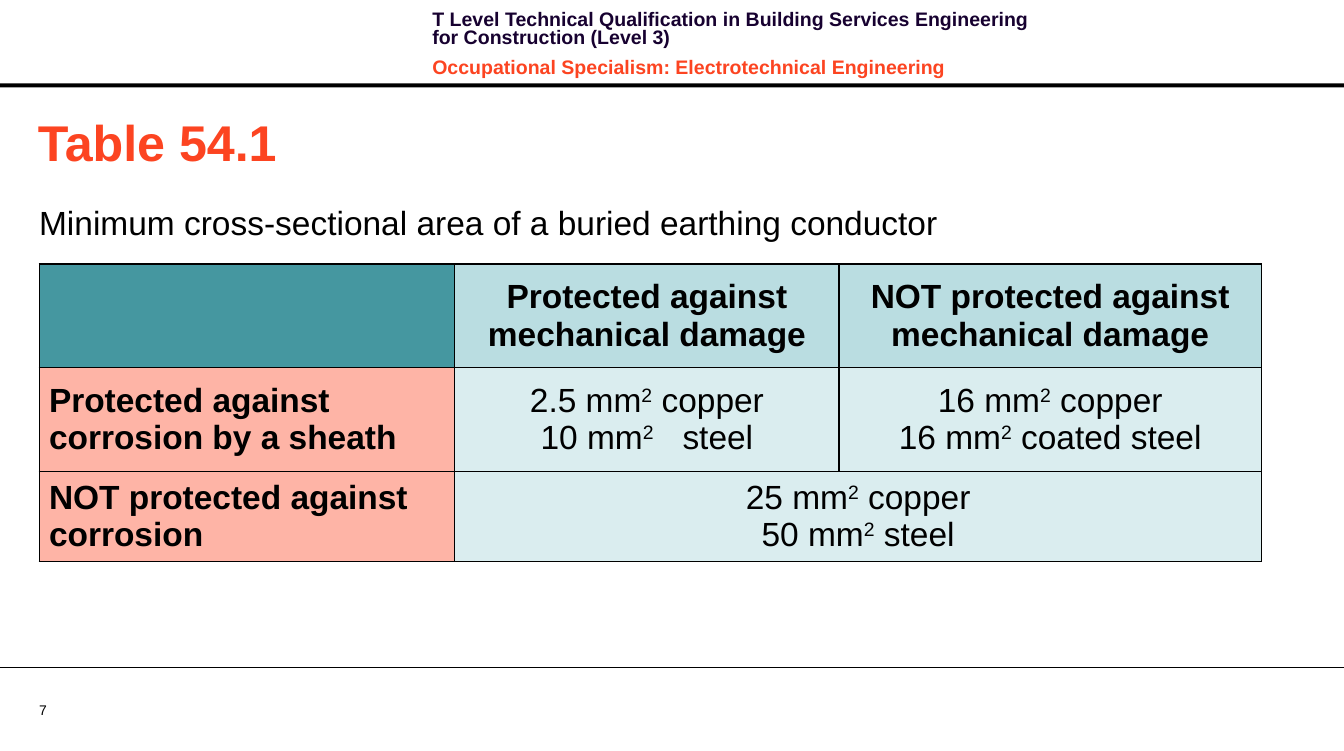
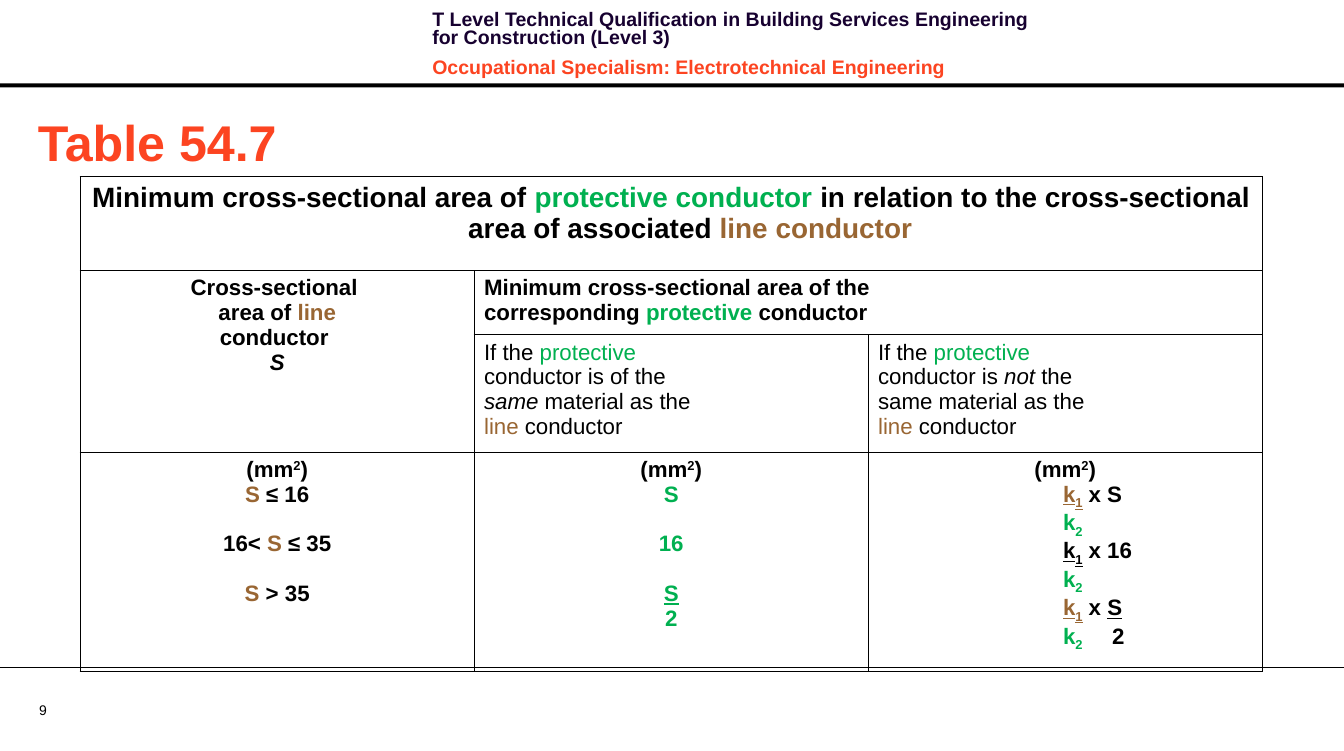
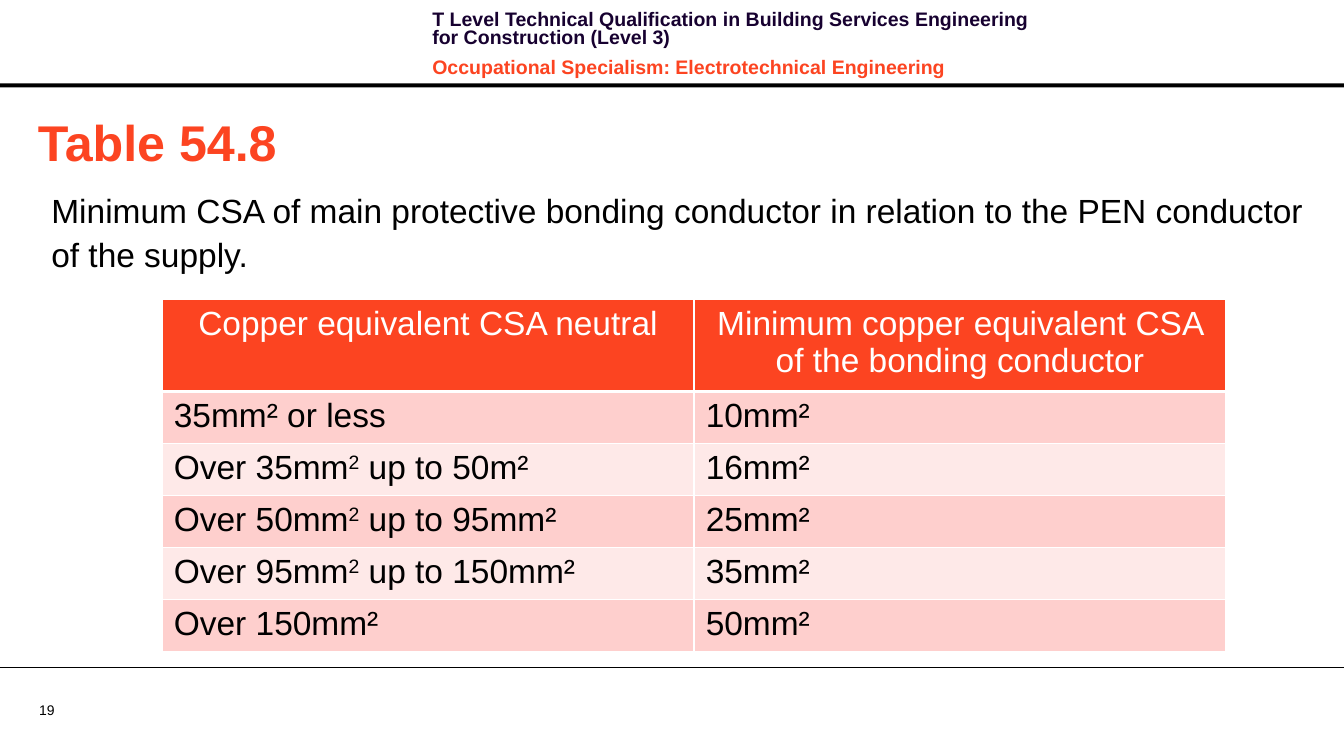
from dataclasses import dataclass

from pptx import Presentation
from pptx.dml.color import RGBColor
from pptx.enum.shapes import MSO_CONNECTOR, MSO_SHAPE
from pptx.enum.text import MSO_ANCHOR, PP_ALIGN
from pptx.oxml import parse_xml
from pptx.oxml.ns import nsdecls
from pptx.util import Cm, Pt

LEFT, CENTER = PP_ALIGN.LEFT, PP_ALIGN.CENTER
TOP, MIDDLE = MSO_ANCHOR.TOP, MSO_ANCHOR.MIDDLE
STRAIGHT, RECT = MSO_CONNECTOR.STRAIGHT, MSO_SHAPE.RECTANGLE


@dataclass(frozen=True)
class Theme:
    font: str = "Arial"
    black: str = "000000"
    white: str = "FFFFFF"
    navy: str = "170130"
    red: str = "FC4421"
    green: str = "00B050"
    brown: str = "996633"
    teal: str = "4597A0"
    sky: str = "BADDE1"
    mist: str = "DAEDEF"
    salmon: str = "FEB4A6"
    pink: str = "FECFCD"
    blush: str = "FEE9E8"
    title: int = 36
    body: int = 24
    lead: int = 20
    small: int = 16
    head: int = 14
    page: int = 10


T = Theme()
WIDE, HIGH = 34.01, 19
SKIP = Pt(17.9)  # one line of small text
HANG = Cm(0.96)
STYLE = {
    "navy": {"color": T.navy},
    "red": {"color": T.red},
    "green": {"color": T.green},
    "brown": {"color": T.brown},
    "slant": {"italic": True},
    "under": {"underline": True},
    "up": {"baseline": "30000"},
    "down": {"baseline": "-25000"},
    "wide": {"spc": "1400"},
}


def para(*runs, **form):
    """A paragraph: runs are strings or (string, style names) pairs."""
    return runs, form


def area(before, after):
    return para(before, ("2", "up"), after)


def cell(*paras, **look):
    return paras, look


def put(obj, values):
    for key, value in values.items():
        setattr(obj, key, value)


def paint(fill, color):
    if color:
        fill.solid()
        fill.fore_color.rgb = RGBColor.from_string(color)
    else:
        fill.background()


def set_form(par, form):
    """Set indents and tab stops, then the plain paragraph attributes."""
    form = dict(form)
    hang, tabs = form.pop("hang", 0), form.pop("tabs", ())
    props = par._p.get_or_add_pPr()
    if hang:
        props.set("marL", str(hang))
        props.set("indent", str(-hang))
    if tabs:
        stops = "".join(f'<a:tab pos="{Cm(x)}" algn="l"/>' for x in tabs)
        props.append(parse_xml(f'<a:tabLst {nsdecls("a")}>{stops}</a:tabLst>'))
    put(par, form)


def add_run(par, text, look):
    look = {"name": T.font, **look}
    run = par.add_run()
    run.text = text
    for key in ("baseline", "spc"):
        if key in look:
            run._r.get_or_add_rPr().set(key, look.pop(key))
    paint(run.font.fill, look.pop("color"))
    look["size"] = Pt(look["size"])
    put(run.font, look)


def write(frame, paras, font, **form):
    for n, (runs, own) in enumerate(paras):
        par = frame.add_paragraph() if n else frame.paragraphs[0]
        mix = {**form, **own}
        if n == 0:
            mix.pop("space_before", None)
        set_form(par, mix)
        for item in runs:
            text, names = (item, "") if isinstance(item, str) else item
            look = {"color": T.black, **font}
            for name in names.split():
                look.update(STYLE[name])
            add_run(par, text, look)


def margins(x, y):
    return {"margin_left": Cm(x), "margin_right": Cm(x),
            "margin_top": Cm(y), "margin_bottom": Cm(y)}


def add_text(slide, box, paras, font, inset=(0, 0), anchor=TOP, **form):
    frame = slide.shapes.add_textbox(*map(Cm, box)).text_frame
    put(frame, {"word_wrap": True, "vertical_anchor": anchor,
                **margins(*inset)})
    write(frame, paras, font, **form)


def add_rule(slide, y):
    rule = slide.shapes.add_connector(STRAIGHT, 0, Cm(y), Cm(WIDE), Cm(y))
    paint(rule.line.fill, T.black)
    rule.line.width = Pt(0.75)
    rule._element.spPr.append(parse_xml(f'<a:effectLst {nsdecls("a")}/>'))


def add_band(slide, y, high):
    band = slide.shapes.add_shape(RECT, 0, Cm(y), Cm(WIDE), Cm(high))
    band.shadow.inherit = False
    paint(band.fill, T.black)
    band.line.fill.background()


def edge(box, color, widths):
    """Draw the left, right, top and bottom borders of a cell."""
    props = box._tc.get_or_add_tcPr()
    for n, (side, width) in enumerate(zip("LRTB", widths)):
        props.insert(n, parse_xml(
            f'<a:ln{side} {nsdecls("a")} w="{Pt(width)}"><a:solidFill>'
            f'<a:srgbClr val="{color}"/></a:solidFill></a:ln{side}>'))


def add_grid(slide, at, cols, highs, rows, font, border=T.black,
             under=1, inset=(0.25, 0.13), anchor=TOP, merges=(), hang=0):
    """Add a table; under is the width of the border below the first row."""
    grid = slide.shapes.add_table(
        len(highs), len(cols), *map(Cm, (*at, sum(cols), sum(highs)))).table
    put(grid, {"first_row": False, "horz_banding": False})
    for col, width in zip(grid.columns, cols):
        col.width = Cm(width)
    for row, high in zip(grid.rows, highs):
        row.height = Cm(high)
    for y, row in enumerate(rows):
        for x, (paras, look) in enumerate(row):
            look = dict(look)
            fill, align = look.pop("fill", None), look.pop("align", LEFT)
            box = grid.cell(y, x)
            put(box, {"vertical_anchor": anchor, **margins(*inset)})
            write(box.text_frame, paras, {**font, **look},
                  alignment=align, hang=hang)
            paint(box.fill, fill)
            edge(box, border, (1, 1, 1, 1 if y else under))
    for start, end in merges:
        grid.cell(*start).merge(grid.cell(*end))


def add_slide(deck, title, page):
    """Add a slide with the shared header, title and footer."""
    slide = deck.slides.add_slide(deck.slide_layouts[6])
    add_text(slide, (0.99, 17.75, 1.63, 0.43), [para(page)],
             {"size": T.page}, anchor=MIDDLE)
    add_rule(slide, 16.89)
    add_band(slide, 2.11, 0.1)
    add_text(slide, (10.69, 0.18, 16.18, 1.63), [
        para(("T Level Technical Qualification in Building Services "
              "Engineering for Construction (Level 3)", "navy")),
        para(("Occupational Specialism: Electrotechnical Engineering", "red")),
    ], {"size": T.head, "bold": True}, (0.25, 0.13),
        line_spacing=Pt(13.1), space_before=Pt(4), space_after=Pt(4))
    add_text(slide, (0.71, 2.67, 32.31, 1.8), [para(title)],
             {"size": T.title, "bold": True, "color": T.red},
             (0.25, 0.13), MIDDLE)
    return slide


def add_body(slide, box, text):
    add_text(slide, box, [para(text)], {"size": T.body},
             line_spacing=1.1, space_after=Pt(12))


def earthing(deck):
    slide = add_slide(deck, "Table 54.1", "7")
    add_body(slide, (0.99, 5, 26.01, 11.51),
             "Minimum cross-sectional area of a buried earthing conductor")
    head = {"fill": T.sky, "bold": True, "align": CENTER}
    side = {"fill": T.salmon, "bold": True}
    data = {"fill": T.mist, "align": CENTER}
    rows = [
        [cell(fill=T.teal),
         cell(para("Protected against mechanical damage"), **head),
         cell(para("NOT protected against mechanical damage"), **head)],
        [cell(para("Protected against corrosion by a sheath"), **side),
         cell(area("2.5 mm", " copper"),
              para("10 mm", ("2", "up"), (" ", "wide"), "steel"), **data),
         cell(area("16 mm", " copper"), area("16 mm", " coated steel"),
              **data)],
        [cell(para("NOT protected against corrosion"), **side),
         cell(area("25 mm", " copper"), area("50 mm", " steel"), **data),
         cell(**data)],
    ]
    add_grid(slide, (0.99, 6.68), (10.52, 9.72, 10.69), (2.62, 2.62, 2.16),
             rows, {"size": T.body}, anchor=MIDDLE,
             merges=[((2, 1), (2, 2))])


def ratio(name, *rest):
    """The two lines of k1 over k2; name is the style of k1."""
    form = {"alignment": LEFT, "hang": 0, "tabs": (4.68, 5.92)}
    return [para("\t", ("k", f"{name} under"), ("1", f"{name} under down"),
                 *rest, **form),
            para("\t", ("k", "green"), ("2", "green down"), **form)]


def protective(deck):
    slide = add_slide(deck, "Table 54.7", "9")
    mid = {"bold": True, "align": CENTER}
    unit = area("(mm", ")")
    green, line = ("protective", "green"), ("line", "brown")
    last = ratio("brown", " x ", ("S", "under"))
    last[1] = para(*last[1][0], "\t2", **last[1][1])
    rows = [
        [cell(para("Minimum cross-sectional area of ",
                   ("protective conductor ", "green"),
                   "in relation to the cross-sectional area of associated ",
                   ("line conductor", "brown")), size=T.lead, **mid),
         cell(), cell()],
        [cell(para("Cross-sectional "), para("area of ", line),
              para("conductor "), para(("S", "slant")), **mid),
         cell(para("Minimum cross-sectional area of the"),
              para("corresponding ", green, " conductor"), bold=True),
         cell()],
        [cell(),
         cell(para("If the ", green), para("conductor is of the"),
              para(("same", "slant"), " material as the"),
              para(line, " conductor")),
         cell(para("If the ", green),
              para("conductor is ", ("not", "slant"), " the"),
              para("same material as the"), para(line, " conductor"))],
        [cell(unit, para(("S", "brown"), " ≤ 16"),
              para("16< ", ("S", "brown"), " ≤ 35", space_before=SKIP),
              para(("S", "brown"), " > 35", space_before=SKIP), **mid),
         cell(unit, para(("S", "green")),
              para(("16", "green"), space_before=SKIP),
              para(("S", "green under"), space_before=SKIP),
              para(("2", "green")), **mid),
         cell(unit, *ratio("brown", " x S"), *ratio("", " x 16"), *last,
              **mid)],
    ]
    add_grid(slide, (2.03, 4.47), [9.97] * 3, (2.38, 1.62, 2.95, 5.18),
             rows, {"size": T.small}, hang=HANG,
             merges=[((0, 0), (0, 2)), ((1, 0), (2, 0)), ((1, 1), (1, 2))])


def bonding(deck):
    slide = add_slide(deck, "Table 54.8", "19")
    add_body(slide, (1.3, 4.7, 31.72, 12.04),
             "Minimum CSA of main protective bonding conductor in relation "
             "to the PEN conductor of the supply.")
    head = {"fill": T.red, "color": T.white, "align": CENTER}
    rows = [[cell(para("Copper equivalent CSA neutral"), **head),
             cell(para("Minimum copper equivalent CSA of the bonding "
                       "conductor"), **head)]]
    sizes = [
        (para("35mm² or less"), "10mm²"),
        (area("Over 35mm", " up to 50m²"), "16mm²"),
        (area("Over 50mm", " up to 95mm²"), "25mm²"),
        (area("Over 95mm", " up to 150mm²"), "35mm²"),
        (para("Over 150mm²"), "50mm²"),
    ]
    for n, (main, bond) in enumerate(sizes):
        fill = T.blush if n % 2 else T.pink
        rows.append([cell(main, fill=fill), cell(para(bond), fill=fill)])
    add_grid(slide, (4.1, 7.57), [13.46] * 2, [2.18] + [1.25] * len(sizes),
             rows, {"size": T.body}, border=T.white, under=3,
             inset=(0.3, 0.15))


def main():
    deck = Presentation()
    put(deck, {"slide_width": Cm(WIDE), "slide_height": Cm(HIGH)})
    for build in (earthing, protective, bonding):
        build(deck)
    deck.save("out.pptx")


if __name__ == "__main__":
    main()
